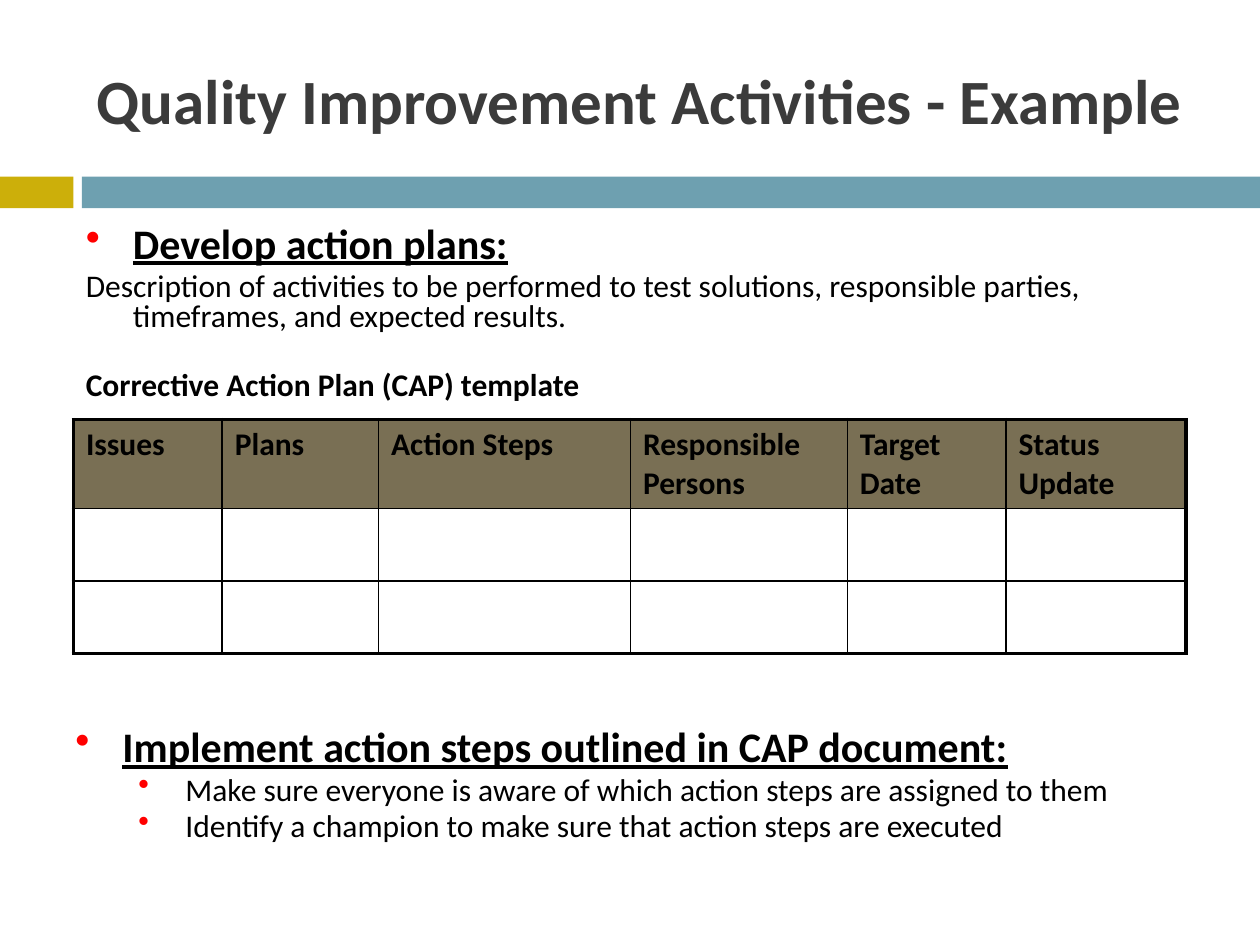
import dataclasses

import pptx
import pptx.dml.color
import pptx.enum.shapes
import pptx.enum.text
import pptx.oxml.ns
import pptx.util
from lxml import etree

Cm = pptx.util.Cm
Pt = pptx.util.Pt


@dataclasses.dataclass(frozen=True)
class Theme:
    """Colours, font and sizes used on the slide."""
    font: str = "Calibri"
    ink: str = "000000"
    title_ink: str = "3B3B3B"
    gold: str = "CCAF0A"
    blue: str = "6EA0B0"
    header: str = "796F54"
    bullet: str = "FF0000"
    title_size: float = 36
    heading_size: float = 24
    body_size: float = 18
    outer_line: float = 2.25
    inner_line: float = 1


THEME = Theme()
HANGING = 0.95
HEADINGS = ["Issues", "Plans", "Action Steps", "Responsible Persons",
            "Target Date", "Status Update"]
COLUMN_WIDTHS = [3, 3.15, 5.08, 4.37, 3.2, 3.63]
ROW_HEIGHTS = [1.79, 1.46, 1.46]


def rgb(code):
    """Return a colour from its hex code."""
    return pptx.dml.color.RGBColor.from_string(code)


def add_child(parent, tag, **attributes):
    """Append a DrawingML element to parent."""
    child = etree.SubElement(parent, pptx.oxml.ns.qn(tag))
    for name, value in attributes.items():
        child.set(name, str(value))
    return child


def write(frame, text, size=THEME.body_size, color=THEME.ink, bold=False,
          underline=False, indent=None, bullet=False, line=None, before=None, level=0):
    """Write one formatted paragraph into a text frame."""
    paragraph = frame.paragraphs[0]
    if paragraph.runs:
        paragraph = frame.add_paragraph()
    paragraph.level = level
    paragraph.line_spacing = line
    paragraph.space_before = Pt(size * 0.2 if before is None else before)
    run = paragraph.add_run()
    run.text = text
    run.font.name = THEME.font
    run.font.size = Pt(size)
    run.font.bold = bold
    run.font.underline = underline
    run.font.color.rgb = rgb(color)
    properties = paragraph._p.get_or_add_pPr()
    if indent is not None:
        properties.set("marL", str(Cm(indent)))
        properties.set("indent", str(-Cm(HANGING)))
    if bullet:
        add_child(add_child(properties, "a:buClr"), "a:srgbClr", val=THEME.bullet)
        add_child(properties, "a:buChar", char="•")


def add_text_area(slide, left, top, width, height):
    """Add a wrapping text box and return its frame."""
    frame = slide.shapes.add_textbox(Cm(left), Cm(top), Cm(width), Cm(height)).text_frame
    frame.word_wrap = True
    return frame


def add_band(slide, left, width, color):
    """Add one piece of the coloured band under the title."""
    band = slide.shapes.add_shape(pptx.enum.shapes.MSO_SHAPE.RECTANGLE,
                                  Cm(left), Cm(3.56), Cm(width), Cm(0.64))
    band.shadow.inherit = False
    band.fill.solid()
    band.fill.fore_color.rgb = rgb(color)
    band.line.fill.background()


def add_borders(cell, outer_sides):
    """Draw the cell borders, thicker on the outer sides."""
    properties = cell._tc.get_or_add_tcPr()
    for side in ("L", "R", "T", "B"):
        weight = THEME.outer_line if side in outer_sides else THEME.inner_line
        border = add_child(properties, f"a:ln{side}", w=Pt(weight))
        add_child(add_child(border, "a:solidFill"), "a:srgbClr", val=THEME.ink)


def add_action_table(slide):
    """Add the empty corrective action plan table."""
    last_row, last_column = len(ROW_HEIGHTS) - 1, len(HEADINGS) - 1
    plan = slide.shapes.add_table(
        last_row + 1, last_column + 1, Cm(1.48), Cm(8.46),
        Cm(sum(COLUMN_WIDTHS)), Cm(sum(ROW_HEIGHTS))).table
    plan.first_row = plan.horz_banding = False
    for column, width in zip(plan.columns, COLUMN_WIDTHS):
        column.width = Cm(width)
    for row_index, height in enumerate(ROW_HEIGHTS):
        plan.rows[row_index].height = Cm(height)
        for column_index, heading in enumerate(HEADINGS):
            cell = plan.cell(row_index, column_index)
            edges = {"L": column_index == 0, "R": column_index == last_column,
                     "T": row_index == 0, "B": row_index == last_row}
            add_borders(cell, [side for side, outer in edges.items() if outer])
            if row_index == 0:
                cell.fill.solid()
                cell.fill.fore_color.rgb = rgb(THEME.header)
                write(cell.text_frame, heading, bold=True)
            else:
                cell.fill.background()


def add_title(slide):
    """Add the slide title."""
    title = add_text_area(slide, 1.7, 0.64, 22.66, 2.74)
    title.vertical_anchor = pptx.enum.text.MSO_ANCHOR.MIDDLE
    write(title, "Quality Improvement Activities - Example",
          size=THEME.title_size, color=THEME.title_ink, bold=True, before=0)


def add_heading(frame, text):
    """Write an underlined heading with a bullet."""
    write(frame, text, size=THEME.heading_size, bold=True, underline=True,
          indent=HANGING, bullet=True, line=0.8)


def add_develop_section(slide):
    """Add the text above the table."""
    develop = add_text_area(slide, 1.48, 4.45, 22.86, 4.23)
    add_heading(develop, "Develop action plans:")
    write(develop, "Description of activities to be performed to test solutions, "
          "responsible parties, timeframes, and expected results.",
          indent=HANGING, line=0.8)
    write(develop, "Corrective Action Plan (CAP) template", bold=True,
          indent=HANGING, line=0.8, before=22)


def add_implement_section(slide):
    """Add the text below the table."""
    implement = add_text_area(slide, 1.27, 14.6, 22.86, 3.39)
    add_heading(implement, "Implement action steps outlined in CAP document:")
    for step in ("Make sure everyone is aware of which action steps are assigned to them",
                 "Identify a champion to make sure that action steps are executed"):
        write(implement, step, indent=2.22, bullet=True, line=0.8, level=1)


def main():
    """Build and save the slide."""
    deck = pptx.Presentation()
    deck.slide_width, deck.slide_height = Cm(25.4), Cm(19.05)
    slide = deck.slides.add_slide(deck.slide_layouts[6])
    add_band(slide, 0, 1.48, THEME.gold)
    add_band(slide, 1.65, 23.75, THEME.blue)
    add_title(slide)
    add_action_table(slide)
    add_develop_section(slide)
    add_implement_section(slide)
    deck.save("out.pptx")


if __name__ == "__main__":
    main()
